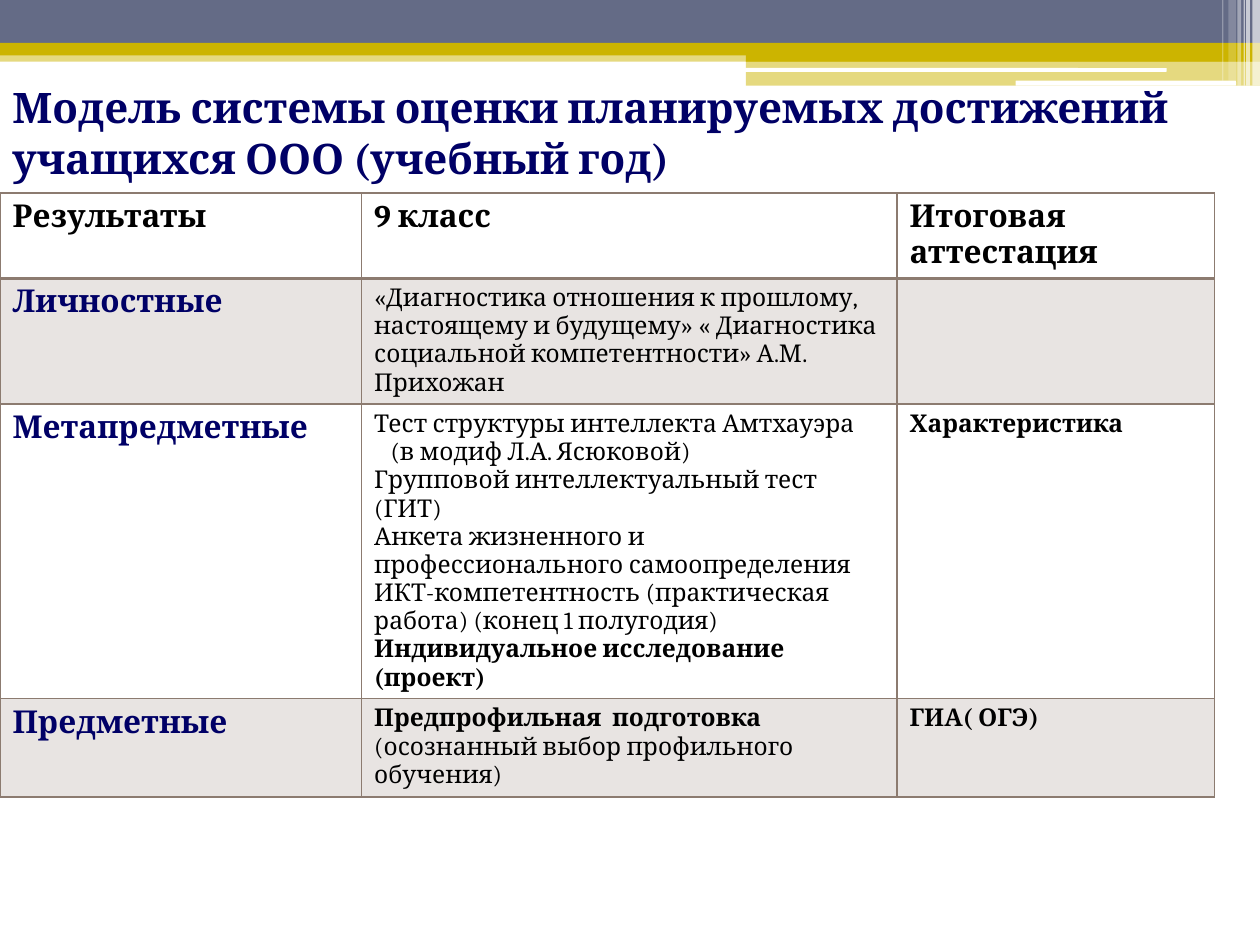
"""Build the slide with the assessment model table for grade 9."""
from lxml import etree
from pptx import Presentation
from pptx import util as u
from pptx.dml.color import RGBColor
from pptx.enum import shapes
from pptx.oxml.ns import qn

COLORS = {"slate": "646B86", "gold": "CCB400", "white": "FFFFFF",
          "black": "000000", "navy": "000066", "taupe": "8C7B70"}
COLS, ROWS = 100, 75
FONT = "Cambria"
HEAD, BODY, TITLE = 18, 14, 24


class Deck:
    """Holds the style and the current slide."""

    def __init__(self):
        self.prs = Presentation()
        self.prs.slide_width, self.prs.slide_height = u.Inches(10), u.Inches(7.5)
        self.s = self.prs.slides.add_slide(self.prs.slide_layouts[6])

    def x(self, cols):
        return round(self.prs.slide_width * cols / COLS)

    def y(self, rows):
        return round(self.prs.slide_height * rows / ROWS)

    def box(self, x, y, w, h):
        return self.x(x), self.y(y), self.x(w), self.y(h)

    def paint(self, fill, element, color, alpha=100):
        fill.solid()
        fill.fore_color.rgb = RGBColor.from_string(COLORS[color])
        if alpha < 100:
            clr = element.find(".//" + qn("a:srgbClr"))
            etree.SubElement(clr, qn("a:alpha"), val=str(alpha * 1000))

    def bar(self, x, y, w, h, color, alpha=100, kind=shapes.MSO_SHAPE.RECTANGLE):
        sp = self.s.shapes.add_shape(kind, *self.box(x, y, w, h))
        sp.shadow.inherit = False
        sp.line.fill.background()
        self.paint(sp.fill, sp.element, color, alpha)

    def run(self, p, text, size, color="black", bold=False):
        for i, line in enumerate(text.split("\n")):
            if i:
                p.add_line_break()
            r = p.add_run()
            r.text = line
            r.font.name, r.font.size, r.font.bold = FONT, u.Pt(size), bold
            r.font.color.rgb = RGBColor.from_string(COLORS[color])

    def fill_text(self, tf, paragraphs):
        for i, runs in enumerate(paragraphs):
            p = tf.add_paragraph() if i else tf.paragraphs[0]
            for run in runs:
                self.run(p, *run)
            if any("\n" in run[0] for run in runs):
                pPr = p._p.get_or_add_pPr()
                pPr.set("marL", str(self.x(1.3)))
                pPr.set("indent", str(-self.x(1.3)))

    def title(self, x, y, w, h, text):
        tf = self.s.shapes.add_textbox(*self.box(x, y, w, h)).text_frame
        tf.word_wrap = True
        self.fill_text(tf, [[(text, TITLE, "navy", True)]])

    def border(self, cell, top, bottom):
        tcPr = cell._tc.get_or_add_tcPr()
        for i, (side, width) in enumerate(zip("LRTB", (1, 1, top, bottom))):
            ln = etree.Element(qn(f"a:ln{side}"), w=str(u.Pt(width)))
            fill = etree.SubElement(ln, qn("a:solidFill"))
            etree.SubElement(fill, qn("a:srgbClr"), val=COLORS["taupe"])
            tcPr.insert(i, ln)

    def table(self, x, y, widths, heights, rows):
        area = self.box(x, y, sum(widths), sum(heights))
        tbl = self.s.shapes.add_table(len(rows), len(widths), *area).table
        tbl.horz_banding = tbl.first_row = False
        for col, width in zip(tbl.columns, widths):
            col.width = self.x(width)
        for i, (height, row) in enumerate(zip(heights, rows)):
            tbl.rows[i].height = self.y(height)
            for j, paragraphs in enumerate(row):
                cell = tbl.cell(i, j)
                if i % 2:
                    self.paint(cell.fill, cell._tc, "taupe", 20)
                else:
                    cell.fill.background()
                self.border(cell, 2 if i == 1 else 1, 2 if i == 0 else 1)
                self.fill_text(cell.text_frame, paragraphs)


def head(text, color="black"):
    return [[(text, HEAD, color, True)]]


def body(*texts):
    return [[(text, BODY)] for text in texts]


def strong(text):
    return [[(text, BODY, "black", True)]]


def main():
    d = Deck()
    for bar in [(0, 4, 100, 0.9, "gold", 50), (0, 0, 100, 3.4, "slate"),
                (0, 3.4, 100, 1, "gold"), (59.2, 3.9, 40.8, 1, "gold"),
                (59.2, 4.8, 40.8, 2, "gold", 50)]:
        d.bar(*bar)
    for x, y, w, h in [(59.1, 5.4, 33.5, 0.3), (80.6, 6.4, 17.5, 0.4)]:
        d.bar(x, y, w, h, "white", kind=shapes.MSO_SHAPE.ROUNDED_RECTANGLE)
    for x, w, h, alpha in [(99.4, 0.6, 6.8, 65), (98.9, 0.3, 6.8, 65),
                           (98.7, 0.1, 6.8, 60), (98.2, 0.3, 6.8, 40),
                           (97.5, 0.6, 6.4, 20), (97, 0.1, 6.4, 30)]:
        d.bar(x, 0, w, h, "white", alpha)

    d.table(0, 15.3, (28.7, 42.5, 25.2), (6.7, 10, 23.3, 7.8), [
        [head("Результаты"), head("9 класс"), head("Итоговая аттестация")],
        [head("Личностные", "navy"),
         body("«Диагностика отношения к прошлому, настоящему и будущему» "
              "« Диагностика социальной компетентности» А.М. Прихожан"),
         []],
        [head("Метапредметные", "navy"),
         body("Тест структуры интеллекта Амтхауэра\n(в модиф Л.А. Ясюковой)",
              "Групповой интеллектуальный тест", "(ГИТ)",
              "Анкета жизненного и профессионального самоопределения",
              "ИКТ-компетентность (практическая работа) (конец 1 полугодия)")
         + strong("Индивидуальное исследование (проект)"),
         strong("Характеристика")],
        [head("Предметные", "navy"),
         [[("Предпрофильная  подготовка ", BODY, "black", True),
           ("(осознанный выбор профильного обучения)", BODY)]],
         strong("ГИА( ОГЭ)")],
    ])
    d.title(0, 6, 100, 9.1, "Модель системы оценки планируемых достижений "
                            "учащихся ООО (учебный год)")
    d.prs.save("out.pptx")


if __name__ == "__main__":
    main()
